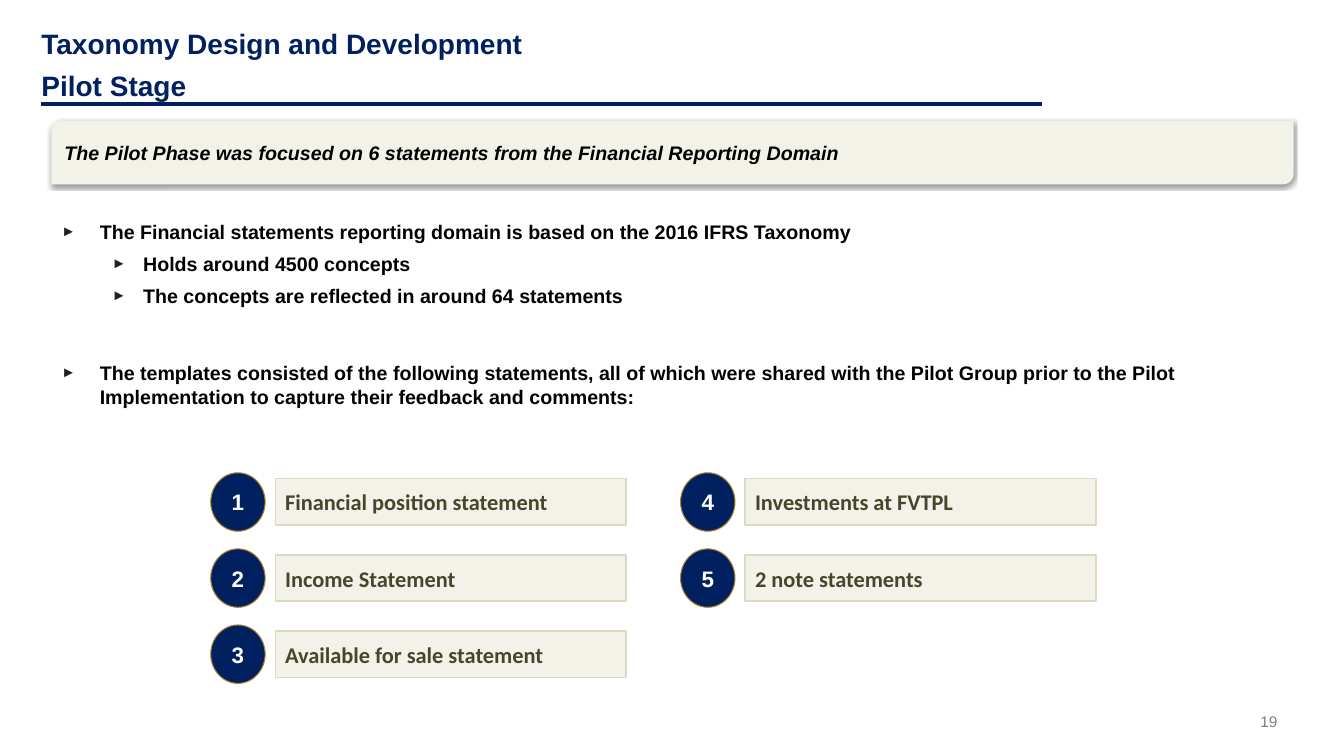
from dataclasses import dataclass

from lxml.etree import SubElement
from pptx import Presentation
from pptx.dml.color import RGBColor
from pptx.enum.shapes import MSO_CONNECTOR, MSO_SHAPE
from pptx.enum.text import MSO_ANCHOR, MSO_AUTO_SIZE, PP_ALIGN
from pptx.oxml.ns import qn
from pptx.util import Inches, Pt


@dataclass(frozen=True)
class Theme:
    navy: str = "002060"
    gold: str = "AE852D"
    cream: str = "F3F2E9"
    sand: str = "DDD9C3"
    olive: str = "4A452A"
    black: str = "000000"
    white: str = "FFFFFF"
    gray: str = "808080"
    bullet: str = "202020"
    font: str = "Arial"
    label_font: str = "Calibri"
    title_size: float = 20
    body_size: float = 14
    label_size: float = 16
    number_size: float = 11


THEME = Theme()

TITLE = ["Taxonomy Design and Development", "Pilot Stage"]
MESSAGE = "The Pilot Phase was focused on 6 statements from the Financial Reporting Domain"
# Level, space before in points, text
BULLETS = [
    (0, 0, "The Financial statements reporting domain is based on the 2016 IFRS Taxonomy"),
    (1, 6, "Holds around 4500 concepts"),
    (1, 6, "The concepts are reflected in around 64 statements"),
    (0, 38.5, "The templates consisted of the following statements, all of which were shared "
              "with the Pilot Group prior to the Pilot Implementation to capture their "
              "feedback and comments:"),
]
# Left margin and hanging indent in inches for each level
INDENTS = [(0.38, -0.38), (0.81, -0.31)]
STATEMENTS = [
    "Financial position statement",
    "Income Statement",
    "Available for sale statement",
    "Investments at FVTPL",
    "2 note statements",
]


def place(shape, box):
    for name, value in zip(("left", "top", "width", "height"), box):
        setattr(shape, name, Inches(value))


def set_frame(frame, anchor=MSO_ANCHOR.TOP, insets=(0.1, 0.05, 0.1, 0.05)):
    settings = {"word_wrap": True, "auto_size": MSO_AUTO_SIZE.NONE, "vertical_anchor": anchor}
    sides = ("margin_left", "margin_top", "margin_right", "margin_bottom")
    settings.update(zip(sides, map(Inches, insets)))
    for name, value in settings.items():
        setattr(frame, name, value)


def write(para, text, color, size, font=THEME.font, bold=True, italic=False,
          align=PP_ALIGN.LEFT):
    para.alignment = align
    span = para.add_run()
    span.text = text
    formats = {"name": font, "size": Pt(size), "bold": bold, "italic": italic}
    for name, value in formats.items():
        setattr(span.font, name, value)
    span.font.color.rgb = RGBColor.from_string(color)


def add_panel(page, kind, box, fill, line=None, weight=1):
    panel = page.shapes.add_shape(kind, *map(Inches, box))
    panel.shadow.inherit = False
    panel.fill.solid()
    panel.fill.fore_color.rgb = RGBColor.from_string(fill)
    if line:
        panel.line.color.rgb = RGBColor.from_string(line)
        panel.line.width = Pt(weight)
    else:
        panel.line.fill.background()
    return panel


def add_title(page, box):
    left, top, width, height = box
    title = page.shapes.title
    place(title, box)
    frame = title.text_frame
    set_frame(frame, insets=(0, 0.04, 0, 0))
    for index, text in enumerate(TITLE):
        para = frame.add_paragraph() if index else frame.paragraphs[0]
        para.line_spacing = 1.25
        write(para, text, THEME.navy, THEME.title_size)
    # Rule under the title
    rule_top = Inches(top + height + 0.01)
    rule = page.shapes.add_connector(
        MSO_CONNECTOR.STRAIGHT, Inches(left), rule_top, Inches(left + width), rule_top)
    rule.line.color.rgb = RGBColor.from_string(THEME.navy)
    rule.line.width = Pt(3)
    SubElement(rule._element.spPr, qn("a:effectLst"))


def add_message(page, box):
    banner = add_panel(page, MSO_SHAPE.ROUND_2_DIAG_RECTANGLE, box, THEME.cream)
    effects = banner._element.spPr.find(qn("a:effectLst"))
    shadow = SubElement(effects, qn("a:outerShdw"), blurRad=str(Pt(3.1)),
                        dist=str(Pt(1.6)), dir="5400000", rotWithShape="0")
    shade = SubElement(shadow, qn("a:srgbClr"), val=THEME.black)
    SubElement(shade, qn("a:alpha"), val="38000")
    set_frame(banner.text_frame, MSO_ANCHOR.MIDDLE)
    write(banner.text_frame.paragraphs[0], MESSAGE, THEME.black, THEME.body_size, italic=True)


def add_bullet(para, level):
    margin, indent = INDENTS[level]
    para.level = level
    properties = para._p.get_or_add_pPr()
    properties.set("marL", str(Inches(margin)))
    properties.set("indent", str(Inches(indent)))
    color = SubElement(properties, qn("a:buClr"))
    SubElement(color, qn("a:srgbClr"), val=THEME.bullet)
    SubElement(properties, qn("a:buSzPct"), val="75000")
    SubElement(properties, qn("a:buFont"), typeface=THEME.font)
    SubElement(properties, qn("a:buChar"), char="►")


def add_body(page, box):
    body = page.placeholders[1]
    place(body, box)
    frame = body.text_frame
    set_frame(frame)
    for index, (level, space, text) in enumerate(BULLETS):
        para = frame.add_paragraph() if index else frame.paragraphs[0]
        add_bullet(para, level)
        para.space_before = Pt(space)
        write(para, text, THEME.black, THEME.body_size)


def add_statement(page, box, number, text):
    left, top, width, height = box
    disc_width, gap, label_height = 0.54, 0.1, 0.46
    offset = disc_width + gap
    label = add_panel(
        page, MSO_SHAPE.RECTANGLE,
        (left + offset, top + (height - label_height) / 2, width - offset, label_height),
        THEME.cream, THEME.sand)
    set_frame(label.text_frame, MSO_ANCHOR.MIDDLE)
    write(label.text_frame.paragraphs[0], text, THEME.olive, THEME.label_size, THEME.label_font)
    disc = add_panel(page, MSO_SHAPE.OVAL, (left, top, disc_width, height),
                     THEME.navy, THEME.gold, 0.75)
    set_frame(disc.text_frame, MSO_ANCHOR.MIDDLE, (0, 0, 0, 0))
    write(disc.text_frame.paragraphs[0], str(number), THEME.white, THEME.label_size,
          align=PP_ALIGN.CENTER)


def add_statements(page, box):
    left, top, width, height = box
    rows, item_width, item_height = 3, 4.12, 0.58
    column_pitch = width - item_width
    row_pitch = (height - item_height) / (rows - 1)
    for index, text in enumerate(STATEMENTS):
        column, row = divmod(index, rows)
        item = (left + column * column_pitch, top + row * row_pitch, item_width, item_height)
        add_statement(page, item, index + 1, text)


def add_page_number(page, box):
    number = page.shapes.add_textbox(*map(Inches, box))
    set_frame(number.text_frame, insets=(0, 0, 0, 0))
    write(number.text_frame.paragraphs[0], "19", THEME.gray, THEME.number_size,
          bold=False, align=PP_ALIGN.RIGHT)


def main():
    deck = Presentation()
    deck.slide_width, deck.slide_height = Inches(13.33), Inches(7.5)
    page = deck.slides.add_slide(deck.slide_layouts[1])
    add_title(page, (0.41, 0.14, 9.92, 0.88))
    add_message(page, (0.51, 1.2, 12.32, 0.63))
    add_body(page, (0.51, 2.13, 12.32, 2.56))
    add_statements(page, (2.09, 4.69, 8.78, 2.09))
    add_page_number(page, (11.62, 7.06, 1.05, 0.22))
    deck.save("out.pptx")


if __name__ == "__main__":
    main()
